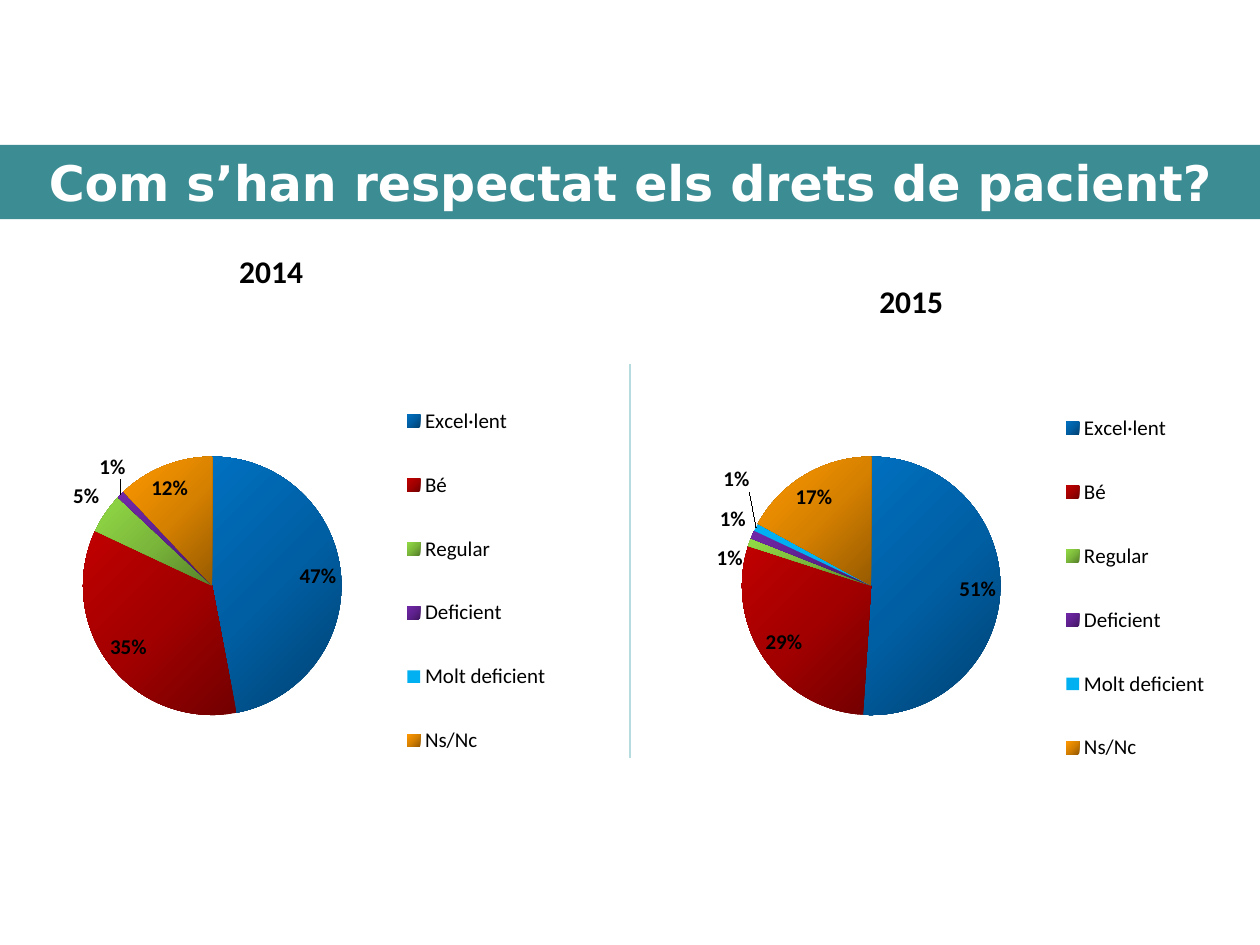
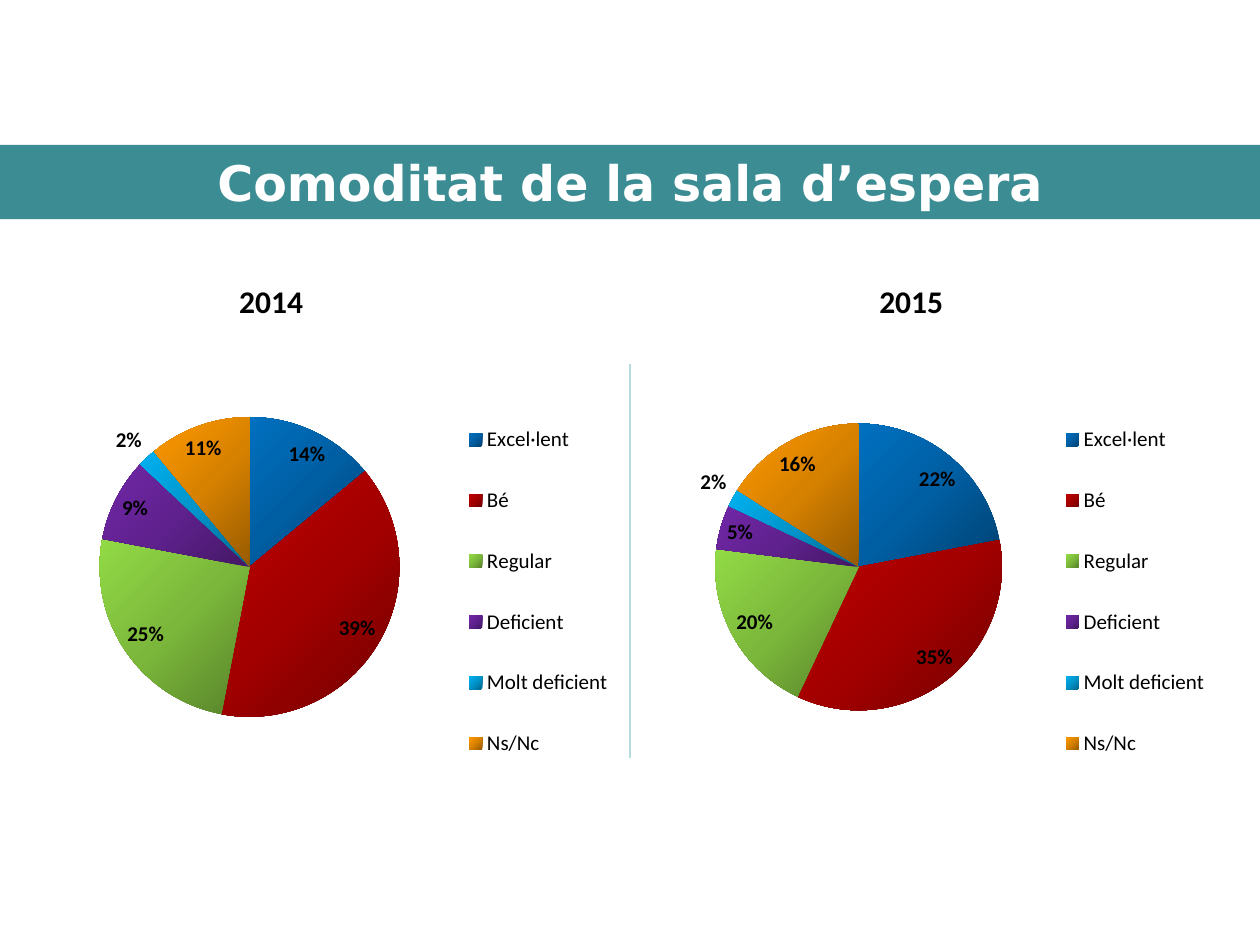
from copy import deepcopy

from lxml import etree
from pptx import Presentation
from pptx.chart.data import CategoryChartData
from pptx.dml.color import RGBColor
from pptx.enum.chart import XL_CHART_TYPE, XL_LABEL_POSITION as LabelPos, XL_LEGEND_POSITION as LegendPos
from pptx.enum.shapes import MSO_CONNECTOR
from pptx.enum.text import MSO_ANCHOR, MSO_AUTO_SIZE, PP_ALIGN
from pptx.oxml import parse_xml
from pptx.oxml.ns import nsdecls, qn
from pptx.util import Inches, Pt

TEAL = RGBColor(0x3C, 0x8C, 0x93)
PALE_TEAL = RGBColor(0xB6, 0xDC, 0xDF)
WHITE = RGBColor(0xFF, 0xFF, 0xFF)
BLACK = RGBColor(0x00, 0x00, 0x00)
SKY = RGBColor(0x00, 0xB0, 0xF0)

BLUE_SHADES = (RGBColor(0x00, 0x42, 0x72), RGBColor(0x00, 0x5E, 0xA2), RGBColor(0x00, 0x70, 0xC0))
RED_SHADES = (RGBColor(0x72, 0x00, 0x00), RGBColor(0xA2, 0x00, 0x00), RGBColor(0xC0, 0x00, 0x00))
GREEN_SHADES = (RGBColor(0x57, 0x81, 0x2A), RGBColor(0x7B, 0xB7, 0x3B), RGBColor(0x92, 0xDA, 0x46))
PURPLE_SHADES = (RGBColor(0x43, 0x17, 0x64), RGBColor(0x5F, 0x21, 0x8E), RGBColor(0x71, 0x28, 0xA8))
SKY_SHADES = (RGBColor(0x00, 0x68, 0x8E), RGBColor(0x00, 0x94, 0xCA), SKY)
ORANGE_SHADES = (RGBColor(0x97, 0x5B, 0x00), RGBColor(0xD7, 0x81, 0x00), RGBColor(0xFF, 0x99, 0x00))

# One entry per rating; a single shade gives a flat slice
SHADED = {
    "Excel·lent": BLUE_SHADES,
    "Bé": RED_SHADES,
    "Regular": GREEN_SHADES,
    "Deficient": PURPLE_SHADES,
    "Molt deficient": SKY_SHADES,
    "Ns/Nc": ORANGE_SHADES,
}
FLAT_WORST = {**SHADED, "Molt deficient": (SKY,)}

TITLE_FONT = {"name": "DejaVu Sans", "size": Pt(28), "bold": True}
YEAR_FONT = {"name": "Calibri", "size": Pt(18), "bold": True}
CHART_FONT = {"name": "Arial", "size": Pt(18)}
LEGEND_FONT = {"name": "Calibri", "size": Pt(12)}
PERCENT_FONT = {**LEGEND_FONT, "bold": True}

CHART_TOP, CHART_HEIGHT = 1.72, 5.78


def set_font(font, formats, color=BLACK):
    for attribute, value in formats.items():
        setattr(font, attribute, value)
    font.color.rgb = color


def add_title(slide, wording):
    title = slide.shapes.title
    title.left, title.top, title.width, title.height = map(Inches, (0, 1.15, 10, 0.59))
    title.fill.solid()
    title.fill.fore_color.rgb = TEAL
    frame = title.text_frame
    frame.auto_size = MSO_AUTO_SIZE.NONE
    frame.vertical_anchor = MSO_ANCHOR.MIDDLE
    frame.text = wording
    paragraph = frame.paragraphs[0]
    paragraph.alignment = PP_ALIGN.CENTER
    set_font(paragraph.runs[0].font, TITLE_FONT, WHITE)


def add_divider(slide):
    divider = slide.shapes.add_connector(
        MSO_CONNECTOR.STRAIGHT, Inches(5), Inches(2.89), Inches(5), Inches(6.02))
    divider.line.color.rgb = PALE_TEAL
    divider.line.width = Pt(0.75)
    etree.SubElement(divider.element.spPr, qn("a:effectLst"))


def add_year(slide, year, left, top):
    box = slide.shapes.add_textbox(Inches(left), Inches(top), Inches(1.48), Inches(0.4))
    frame = box.text_frame
    frame.word_wrap = True
    frame.auto_size = MSO_AUTO_SIZE.SHAPE_TO_FIT_TEXT
    frame.text = year
    set_font(frame.paragraphs[0].runs[0].font, YEAR_FONT)


def manual_layout(x, y, width, height, inner=False):
    """Return a c:layout element; the numbers are fractions of the chart."""
    target = '<c:layoutTarget val="inner"/>' if inner else ""
    return parse_xml(
        f'<c:layout {nsdecls("c")}><c:manualLayout>{target}'
        '<c:xMode val="edge"/><c:yMode val="edge"/>'
        f'<c:x val="{x}"/><c:y val="{y}"/><c:w val="{width}"/><c:h val="{height}"/>'
        '</c:manualLayout></c:layout>')


def shade_slice(chart, fill, shades):
    if len(shades) == 1:
        fill.solid()
        fill.fore_color.rgb = shades[0]
        return
    fill.gradient()
    fill.gradient_angle = 135
    stop_list = chart.element.xpath(".//a:gsLst")[-1]
    stop_list.append(deepcopy(stop_list[-1]))
    for stop, position, shade in zip(fill.gradient_stops, (0, 0.5, 1), shades):
        stop.position = position
        stop.color.rgb = shade


def add_pie(slide, left, width, shares, palette, plot_area, legend_area):
    data = CategoryChartData()
    data.categories = list(palette)
    data.add_series("Series 1", shares)
    chart = slide.shapes.add_chart(
        XL_CHART_TYPE.PIE, Inches(left), Inches(CHART_TOP),
        Inches(width), Inches(CHART_HEIGHT), data).chart
    chart.has_title = False
    set_font(chart.font, CHART_FONT)
    chart.element.xpath("c:chart")[0].addnext(parse_xml(
        f'<c:spPr {nsdecls("c", "a")}><a:noFill/><a:ln><a:noFill/></a:ln></c:spPr>'))

    pie = chart.plots[0]
    pie.vary_by_categories = True
    for index, shades in enumerate(palette.values()):
        shade_slice(chart, pie.series[0].points[index].format.fill, shades)

    pie.has_data_labels = True
    labels = pie.data_labels
    labels.show_percentage = True
    labels.show_value = False
    labels.number_format, labels.number_format_is_linked = "0%", False
    labels.position = LabelPos.BEST_FIT
    set_font(labels.font, PERCENT_FONT)

    chart.has_legend = True
    legend = chart.legend
    legend.position = LegendPos.RIGHT
    legend.include_in_layout = False
    set_font(legend.font, LEGEND_FONT)

    for old_layout in chart.element.xpath(".//c:plotArea/c:layout | .//c:legend/c:layout"):
        old_layout.getparent().remove(old_layout)
    chart.element.xpath(".//c:plotArea")[0].insert(0, manual_layout(*plot_area, inner=True))
    chart.element.xpath(".//c:legendPos")[0].addnext(manual_layout(*legend_area))


def add_comparison(deck, question, palette, plot_area, pie_2014, pie_2015, year_2014_top):
    slide = deck.slides.add_slide(deck.slide_layouts[5])
    add_title(slide, question)
    add_pie(slide, **pie_2014, palette=palette, plot_area=plot_area)
    add_divider(slide)
    add_year(slide, "2014", 1.8, year_2014_top)
    add_year(slide, "2015", 6.88, 2.19)
    add_pie(slide, **pie_2015, palette=palette, plot_area=plot_area)


def main():
    deck = Presentation()
    deck.slide_width, deck.slide_height = Inches(10), Inches(7.5)
    add_comparison(
        deck, "Com s’han respectat els drets de pacient?", FLAT_WORST,
        plot_area=(0.148, 0.108, 0.461, 0.798),
        pie_2014={"left": 0, "width": 4.45, "shares": (47, 35, 5, 1, 0, 12),
                  "legend_area": (0.71, 0.21, 0.28, 0.58)},
        pie_2015={"left": 5.23, "width": 4.45, "shares": (51, 29, 1, 1, 1, 17),
                  "legend_area": (0.71, 0.22, 0.28, 0.58)},
        year_2014_top=1.95)
    add_comparison(
        deck, "Comoditat de la sala d’espera", SHADED,
        plot_area=(0.149, 0.094, 0.448, 0.774),
        pie_2014={"left": 0, "width": 5.31, "shares": (14, 39, 25, 9, 2, 11),
                  "legend_area": (0.685, 0.24, 0.24, 0.55)},
        pie_2015={"left": 4.92, "width": 5.08, "shares": (22, 35, 20, 5, 2, 16),
                  "legend_area": (0.68, 0.24, 0.25, 0.55)},
        year_2014_top=2.19)
    deck.save("out.pptx")


if __name__ == "__main__":
    main()
